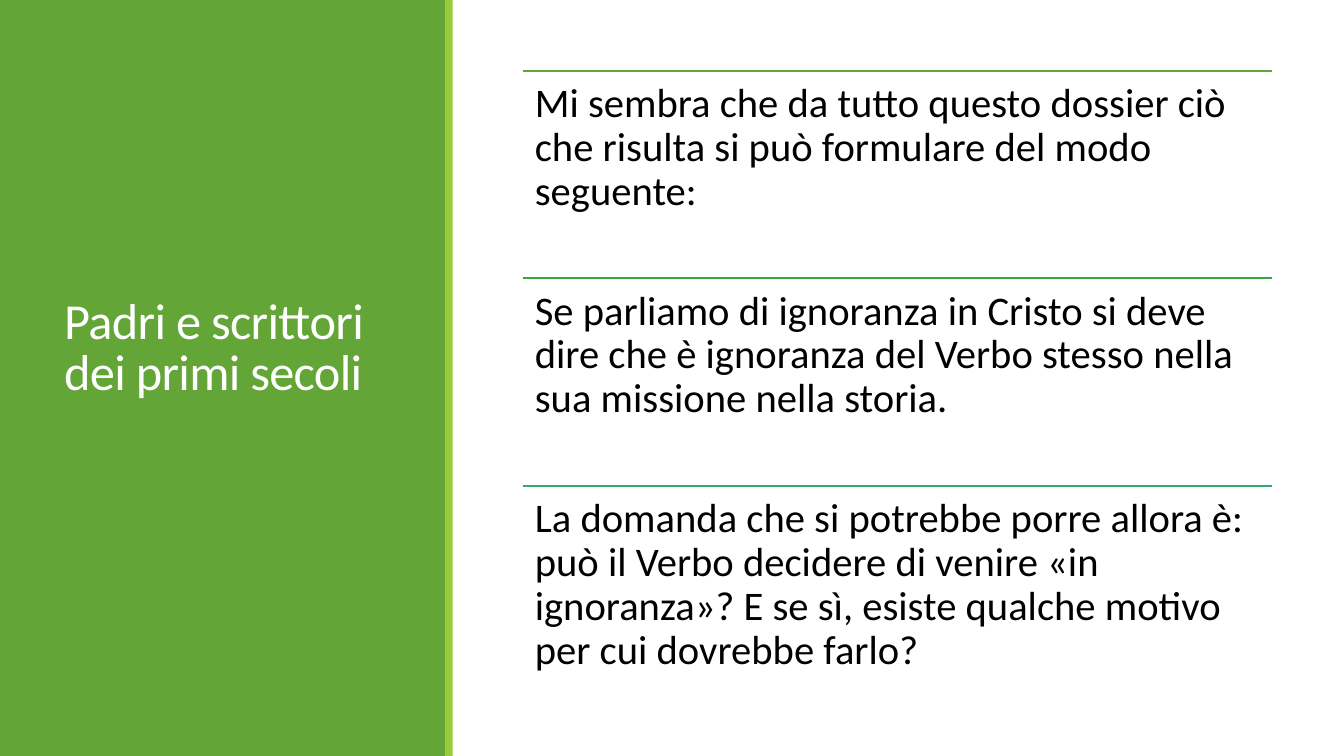
from lxml.etree import SubElement
from pptx import Presentation
from pptx.dml.color import RGBColor
from pptx.enum.shapes import MSO_CONNECTOR as Connector, MSO_SHAPE as Shape
from pptx.enum.text import MSO_ANCHOR as Anchor
from pptx.oxml.ns import qn
from pptx.util import Cm, Pt

WHITE = RGBColor(0xFF, 0xFF, 0xFF)
BLACK = RGBColor(0x00, 0x00, 0x00)
GREEN = RGBColor(0x63, 0xA5, 0x37)
LIME = RGBColor(0x99, 0xCB, 0x38)
EMERALD = RGBColor(0x37, 0xA6, 0x3D)
TEAL = RGBColor(0x37, 0xA7, 0x6F)

TITLE = "Padri e scrittori dei primi secoli"
STATEMENTS = [
    ("Mi sembra che da tutto questo dossier ciò che risulta si può formulare "
     "del modo seguente:", GREEN),
    ("Se parliamo di ignoranza in Cristo si deve dire che è ignoranza del Verbo "
     "stesso nella sua missione nella storia.", EMERALD),
    ("La domanda che si potrebbe porre allora è: può il Verbo decidere di venire "
     "«in ignoranza»? E se sì, esiste qualche motivo per cui dovrebbe farlo?", TEAL),
]


def add_text(slide, box, text, size, color, anchor=Anchor.TOP, line_spacing=0.9,
             inset=(0.3, 0.3), tracking=None):
    frame = slide.shapes.add_textbox(*map(Cm, box)).text_frame
    frame.word_wrap = True
    frame.vertical_anchor = anchor
    frame.margin_left = frame.margin_right = Cm(inset[0])
    frame.margin_top = frame.margin_bottom = Cm(inset[1])
    paragraph = frame.paragraphs[0]
    paragraph.line_spacing = line_spacing
    run = paragraph.add_run()
    run.text = text
    run.font.name = "Calibri"
    run.font.size = Pt(size)
    run.font.color.rgb = color
    if tracking is not None:
        run.font._element.set("spc", str(round(tracking * 100)))


def add_band(slide, box, color):
    band = slide.shapes.add_shape(Shape.RECTANGLE, *map(Cm, box))
    band.shadow.inherit = False
    band.fill.solid()
    band.fill.fore_color.rgb = color
    band.line.fill.background()


def add_rule(slide, left, top, width, color):
    rule = slide.shapes.add_connector(
        Connector.STRAIGHT, Cm(left), Cm(top), Cm(left + width), Cm(top))
    rule.line.color.rgb = color
    rule.line.width = Pt(1.25)
    SubElement(rule._element.spPr, qn("a:effectLst"))


def add_title_panel(slide, left, top, width, height):
    edge = 0.18
    add_band(slide, (left, top, width - edge, height), GREEN)
    add_band(slide, (left + width - edge, top, edge, height), LIME)
    add_text(slide, (left + 1.37, top + 1.45, 8.56, 14.71), TITLE, 36, WHITE,
             anchor=Anchor.MIDDLE, line_spacing=0.85, inset=(0.25, 0.13),
             tracking=-0.5)


def add_statements(slide, left, top, width, height):
    row_height = height / len(STATEMENTS)
    for row, (statement, rule_color) in enumerate(STATEMENTS):
        row_top = top + row * row_height
        add_rule(slide, left, row_top, width, rule_color)
        add_text(slide, (left, row_top, width, row_height), statement, 29, BLACK)


def main():
    deck = Presentation()
    deck.slide_width, deck.slide_height = Cm(33.87), Cm(19.05)
    slide = deck.slides.add_slide(deck.slide_layouts[6])
    add_title_panel(slide, 0, 0, 11.41, 19.05)
    add_statements(slide, 13.18, 1.78, 18.87, 15.69)
    deck.save("out.pptx")


if __name__ == "__main__":
    main()
